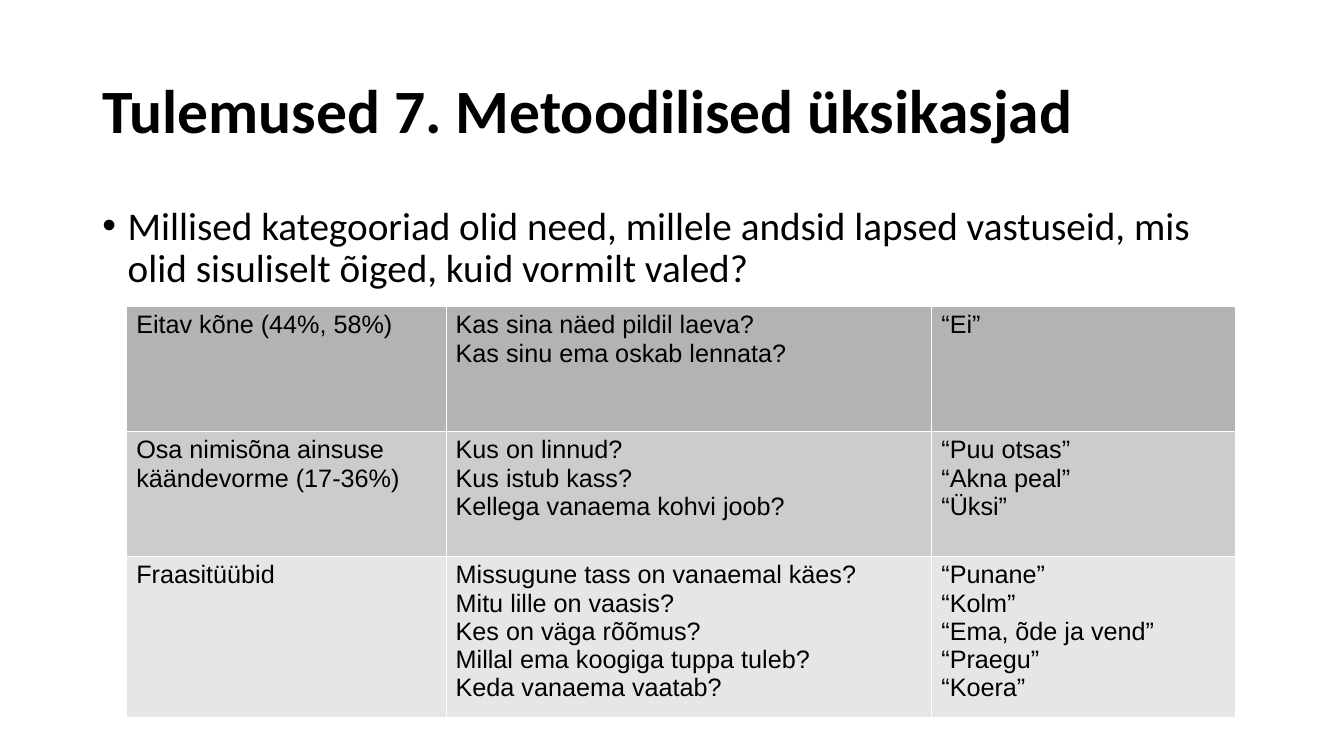
from lxml.etree import SubElement
from pptx import Presentation
from pptx.dml.color import RGBColor
from pptx.enum.text import MSO_ANCHOR as Anchor
from pptx.oxml.ns import qn
from pptx.util import Cm, Pt

BLACK = RGBColor(0x00, 0x00, 0x00)
WHITE = RGBColor(0xFF, 0xFF, 0xFF)
DARK_GREY = RGBColor(0xB3, 0xB3, 0xB3)
MID_GREY = RGBColor(0xCC, 0xCC, 0xCC)
LIGHT_GREY = RGBColor(0xE6, 0xE6, 0xE6)

COLUMN_WIDTHS = [8.05, 12.24, 7.65]
ROW_HEIGHTS = [3.15, 3.15, 3.81]
ROW_FILLS = [DARK_GREY, MID_GREY, LIGHT_GREY]
CATEGORIES = [
    ["Eitav kõne (44%, 58%)",
     "Kas sina näed pildil laeva?\nKas sinu ema oskab lennata?",
     "“Ei”"],
    ["Osa nimisõna ainsuse käändevorme (17-36%)",
     "Kus on linnud?\nKus istub kass?\nKellega vanaema kohvi joob?",
     "“Puu otsas”\n“Akna peal”\n“Üksi”"],
    ["Fraasitüübid",
     "Missugune tass on vanaemal käes?\nMitu lille on vaasis?\nKes on väga rõõmus?\n"
     "Millal ema koogiga tuppa tuleb?\nKeda vanaema vaatab?",
     "“Punane”\n“Kolm”\n“Ema, õde ja vend”\n“Praegu”\n“Koera”"],
]


class SlideBuilder:
    heading_font = "Calibri"
    table_font = "Arial"
    border_width = Pt(0.06)

    def __init__(self, slide):
        self.slide = slide

    def style(self, text_frame, font, size, bold=False):
        for paragraph in text_frame.paragraphs:
            for run in paragraph.runs:
                run.font.name = font
                run.font.size = Pt(size)
                run.font.bold = bold
                run.font.color.rgb = BLACK

    def text(self, left, top, width, height, text, size, bold=False, anchor=Anchor.TOP):
        box = self.slide.shapes.add_textbox(Cm(left), Cm(top), Cm(width), Cm(height))
        text_frame = box.text_frame
        text_frame.word_wrap = True
        text_frame.vertical_anchor = anchor
        text_frame.text = text
        text_frame.paragraphs[0].line_spacing = 0.9
        self.style(text_frame, self.heading_font, size, bold)
        return text_frame.paragraphs[0]

    def bullet(self, *args):
        paragraph = self.text(*args)
        paragraph.space_before = Pt(10)
        properties = paragraph._p.get_or_add_pPr()
        properties.set("marL", str(Cm(0.64)))
        properties.set("indent", str(-Cm(0.64)))
        SubElement(properties, qn("a:buFont")).set("typeface", "Arial")
        SubElement(properties, qn("a:buChar")).set("char", "•")

    def border(self, cell):
        properties = cell._tc.get_or_add_tcPr()
        for side in ("a:lnL", "a:lnR", "a:lnT", "a:lnB"):
            line = SubElement(properties, qn(side), w=str(self.border_width))
            fill = SubElement(line, qn("a:solidFill"))
            SubElement(fill, qn("a:srgbClr"), val=str(WHITE))

    def table(self, left, top, widths, heights, rows, fills, size):
        frame = self.slide.shapes.add_table(
            len(rows), len(widths), Cm(left), Cm(top), Cm(sum(widths)), Cm(sum(heights)))
        table = frame.table
        table.first_row = False
        table.horz_banding = False
        for column, width in zip(table.columns, widths):
            column.width = Cm(width)
        for row, height, texts, color in zip(table.rows, heights, rows, fills):
            row.height = Cm(height)
            for cell, text in zip(row.cells, texts):
                self.border(cell)
                cell.fill.solid()
                cell.fill.fore_color.rgb = color
                cell.text_frame.text = text
                self.style(cell.text_frame, self.table_font, size)


def main():
    presentation = Presentation()
    presentation.slide_width = Cm(33.87)
    presentation.slide_height = Cm(19.05)
    builder = SlideBuilder(presentation.slides.add_slide(presentation.slide_layouts[6]))

    # Title
    builder.text(2.33, 1.01, 29.21, 3.68, "Tulemused 7. Metoodilised üksikasjad",
                 44, True, Anchor.MIDDLE)

    # Question
    builder.bullet(2.33, 5.07, 29.6, 13.4,
                   "Millised kategooriad olid need, millele andsid lapsed vastuseid, "
                   "mis olid sisuliselt õiged, kuid vormilt valed?", 28)

    # Categories with example questions and answers
    builder.table(3.18, 7.71, COLUMN_WIDTHS, ROW_HEIGHTS, CATEGORIES, ROW_FILLS, 18)

    presentation.save("out.pptx")


if __name__ == "__main__":
    main()
